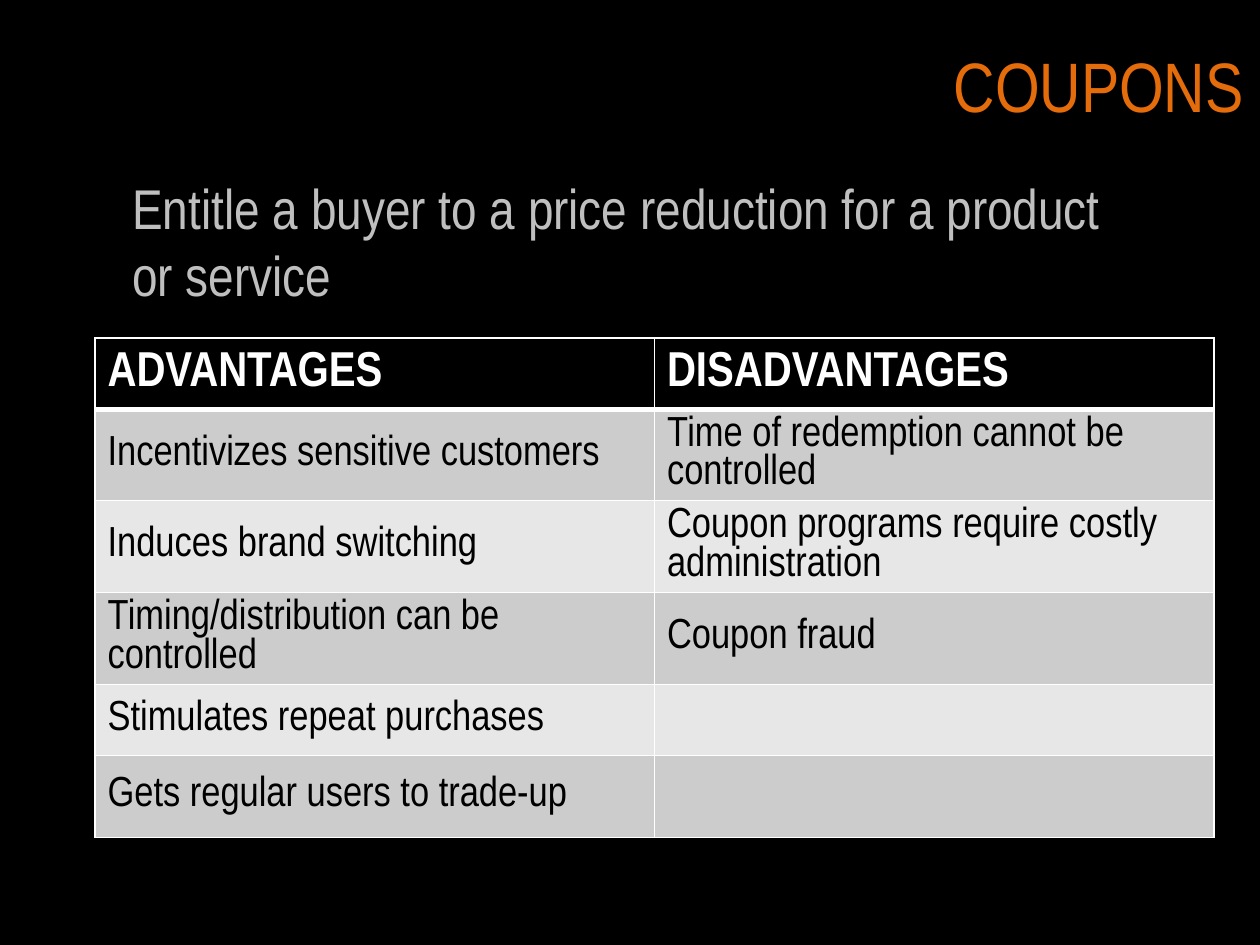
from lxml import etree
from pptx import Presentation, util as u
from pptx.dml.color import RGBColor
from pptx.enum import text
from pptx.oxml.ns import qn

PX = 914400 // 126
FONT = "Arial Narrow"
COLOURS = {
    "black": "000000",
    "white": "FFFFFF",
    "title": "E46C0A",
    "lead": "BFBFBF",
    "odd": "CCCCCC",
    "even": "E7E7E7",
}
ROWS = [
    ("ADVANTAGES", "DISADVANTAGES"),
    ("Incentivizes sensitive customers", "Time of redemption cannot be controlled"),
    ("Induces brand switching", "Coupon programs require costly administration"),
    ("Timing/distribution can be controlled", "Coupon fraud"),
    ("Stimulates repeat purchases", ""),
    ("Gets regular users to trade-up", ""),
]
ROW_HEIGHTS = [71, 91, 92, 92, 71, 82]


def colour(name):
    """Return the named colour."""
    return RGBColor.from_string(COLOURS[name])


def style(paragraph, size, name, bold=False):
    """Format every run of a paragraph."""
    for span in paragraph.runs:
        span.font.name = FONT
        span.font.size = u.Pt(size)
        span.font.bold = bold
        span.font.color.rgb = colour(name)


def add_text(page, box, words, size, name, align, bottom=6):
    """Add one vertically centred paragraph in the given box."""
    frame = page.shapes.add_textbox(*(side * PX for side in box)).text_frame
    frame.word_wrap = True
    frame.vertical_anchor = text.MSO_ANCHOR.MIDDLE
    frame.margin_bottom = bottom * PX
    frame.text = words
    frame.paragraphs[0].alignment = align
    style(frame.paragraphs[0], size, name)


def add_borders(cell, bottom_width=1, top_width=1):
    """Draw white lines around a cell, ahead of its fill."""
    properties = cell._tc.get_or_add_tcPr()
    widths = {"a:lnL": 1, "a:lnR": 1, "a:lnT": top_width, "a:lnB": bottom_width}
    for place, (tag, width) in enumerate(widths.items()):
        line = etree.Element(qn(tag), w=str(u.Pt(width)))
        fill = etree.SubElement(line, qn("a:solidFill"))
        etree.SubElement(fill, qn("a:srgbClr"), val=COLOURS["white"])
        properties.insert(place, line)


def fill_cell(cell, words, row):
    """Write and format one cell according to its row."""
    header = row == 0
    cell.text = words
    cell.vertical_anchor = text.MSO_ANCHOR.MIDDLE
    cell.fill.solid()
    cell.fill.fore_color.rgb = colour("black" if header else "odd" if row % 2 else "even")
    paragraph = cell.text_frame.paragraphs[0]
    if not header:
        paragraph.line_spacing = u.Pt(22)
    style(paragraph, 28 if header else 24, "white" if header else "black", header)
    add_borders(cell, 3 if header else 1, 3 if row == 1 else 1)


def add_comparison(page, box):
    """Add the table of advantages and disadvantages in the given box."""
    frame = page.shapes.add_table(len(ROWS), 2, *(side * PX for side in box))
    table = frame.table
    for row, (pair, height) in enumerate(zip(ROWS, ROW_HEIGHTS)):
        table.rows[row].height = height * PX
        for column, words in enumerate(pair):
            fill_cell(table.cell(row, column), words, row)


def build_page(deck):
    """Build the coupons slide."""
    page = deck.slides.add_slide(deck.slide_layouts[6])
    page.background.fill.solid()
    page.background.fill.fore_color.rgb = colour("black")
    add_text(page, (74, 0, 1182, 168), "COUPONS", 40, "title", text.PP_ALIGN.RIGHT)
    add_comparison(page, (95, 338, 1119, sum(ROW_HEIGHTS)))
    add_text(page, (120, 122, 1032, 295),
             "Entitle a buyer to a price reduction for a product or service",
             32, "lead", text.PP_ALIGN.LEFT, bottom=64)


def main():
    """Create and save the deck."""
    deck = Presentation()
    deck.slide_width, deck.slide_height = 1260 * PX, 945 * PX
    build_page(deck)
    deck.save("out.pptx")


if __name__ == "__main__":
    main()
